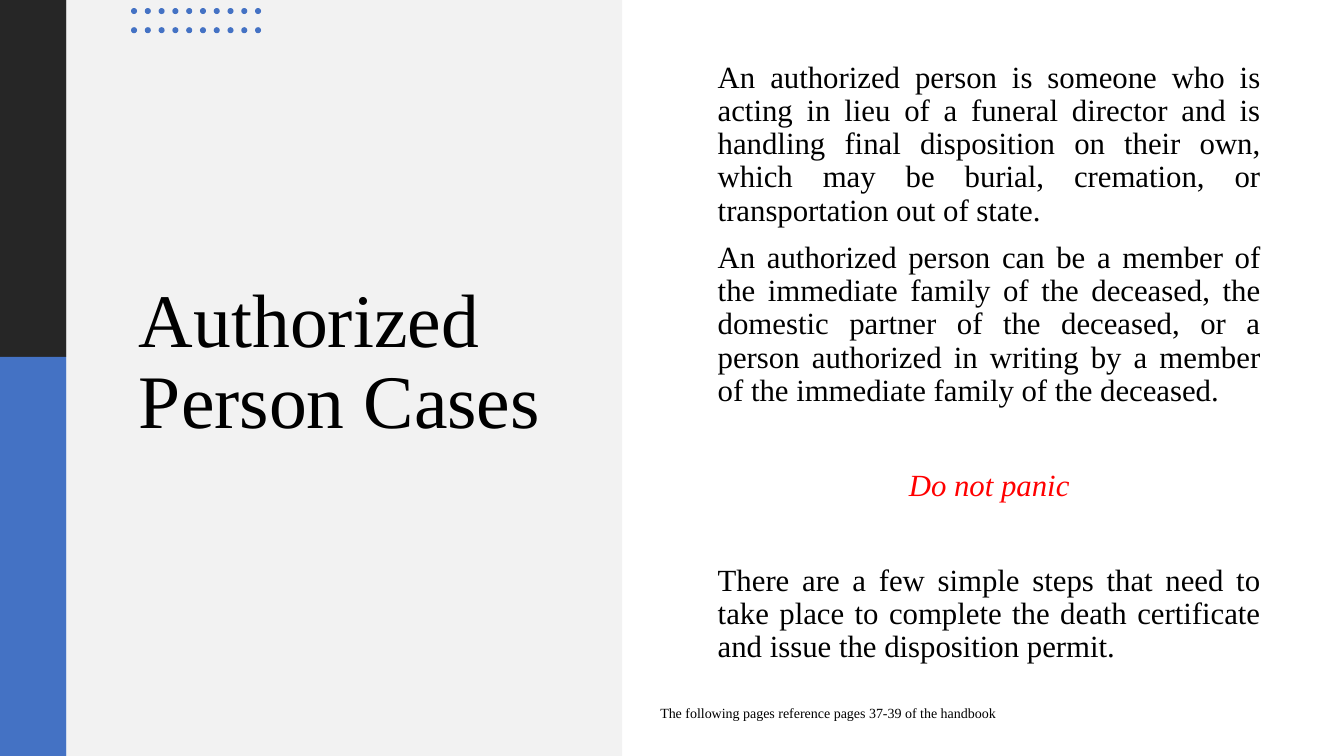
"""Builds the Authorized Person Cases slide."""
from pptx import Presentation
from pptx.dml.color import RGBColor
from pptx.enum.shapes import MSO_SHAPE
from pptx.enum.text import MSO_ANCHOR, MSO_AUTO_SIZE, PP_ALIGN
from pptx.util import Inches, Pt

RECTANGLE, OVAL = MSO_SHAPE.RECTANGLE, MSO_SHAPE.OVAL
TOP, MIDDLE = MSO_ANCHOR.TOP, MSO_ANCHOR.MIDDLE
LEFT, CENTER, JUSTIFY = PP_ALIGN.LEFT, PP_ALIGN.CENTER, PP_ALIGN.JUSTIFY
GROW = MSO_AUTO_SIZE.SHAPE_TO_FIT_TEXT

THEME = {
    "font": "Times New Roman",
    "text": "000000", "alert": "FF0000", "accent": "4472C4",
    "dark": "262626", "panel": "F2F2F2",
    "title": 54, "body": 22, "note": 10,
    "line": 0.9, "gap": 10, "wide_gap": 44,
}

TITLE = "Authorized Person Cases"
BODY = [
    ("An authorized person is someone who is acting in lieu of a funeral director "
     "and is handling final disposition on their own, which may be burial, "
     "cremation, or transportation out of state.", "gap", JUSTIFY, "text"),
    ("An authorized person can be a member of the immediate family of the deceased, "
     "the domestic partner of the deceased, or a person authorized in writing by a "
     "member of the immediate family of the deceased.", "gap", JUSTIFY, "text"),
    ("Do not panic", "wide_gap", CENTER, "alert"),
    ("There are a few simple steps that need to take place to complete the death "
     "certificate and issue the disposition permit.", "wide_gap", JUSTIFY, "text"),
]
NOTE = "The following pages reference pages 37-39 of the handbook"

SLIDE_W, SLIDE_H = 13.33, 7.5
STRIP_W, STRIP_SPLIT, PANEL_W = 0.66, 3.54, 5.51
PANELS = [
    ((0, 0, STRIP_W, STRIP_SPLIT), "dark"),
    ((0, STRIP_SPLIT, STRIP_W, SLIDE_H - STRIP_SPLIT), "accent"),
    ((STRIP_W, 0, PANEL_W, SLIDE_H), "panel"),
]
DOT_COLUMNS, DOT_ROWS, DOT_SIZE = 10, 2, 0.06
DOT_FIRST_X, DOT_LAST_X, DOT_FIRST_Y, DOT_ROW_STEP = 1.3, 2.53, 0.08, 0.19


def add_filled(shapes, kind, box, color):
    shape = shapes.add_shape(kind, *map(Inches, box))
    shape.shadow.inherit = False
    shape.fill.solid()
    shape.fill.fore_color.rgb = RGBColor.from_string(THEME[color])
    shape.line.fill.background()


def add_text(slide, box, size, anchor, paragraphs, line_spacing):
    frame = slide.shapes.add_textbox(*map(Inches, box)).text_frame
    frame.word_wrap = True
    frame.vertical_anchor = anchor
    frame.text = "\n".join(text for text, *_ in paragraphs)
    for paragraph, (_, gap, align, color) in zip(frame.paragraphs, paragraphs):
        paragraph.alignment = align
        paragraph.line_spacing = line_spacing
        paragraph.space_before = Pt(THEME[gap] if gap else 0)
        font = paragraph.runs[0].font
        font.name = THEME["font"]
        font.size = Pt(THEME[size])
        font.italic = color == "alert"
        font.color.rgb = RGBColor.from_string(THEME[color])
    return frame


def main():
    deck = Presentation()
    deck.slide_width, deck.slide_height = Inches(SLIDE_W), Inches(SLIDE_H)
    slide = deck.slides.add_slide(deck.slide_layouts[6])

    for box, color in PANELS:
        add_filled(slide.shapes, RECTANGLE, box, color)

    add_text(slide, (1.28, 1.46, 4.29, 4.29), "title", MIDDLE,
             [(TITLE, None, LEFT, "text")], THEME["line"])

    dots = slide.shapes.add_group_shape().shapes
    column_step = (DOT_LAST_X - DOT_FIRST_X) / (DOT_COLUMNS - 1)
    for column in range(DOT_COLUMNS):
        for row in range(DOT_ROWS):
            x = DOT_FIRST_X + column * column_step
            y = DOT_FIRST_Y + row * DOT_ROW_STEP
            add_filled(dots, OVAL, (x, y, DOT_SIZE, DOT_SIZE), "accent")

    add_text(slide, (7.02, 0.55, 5.58, 6.1), "body", MIDDLE, BODY, THEME["line"])
    note = add_text(slide, (6.45, 6.94, 6.22, 0.27), "note", TOP,
                    [(NOTE, None, LEFT, "text")], 1.0)
    note.auto_size = GROW

    deck.save("out.pptx")


if __name__ == "__main__":
    main()
